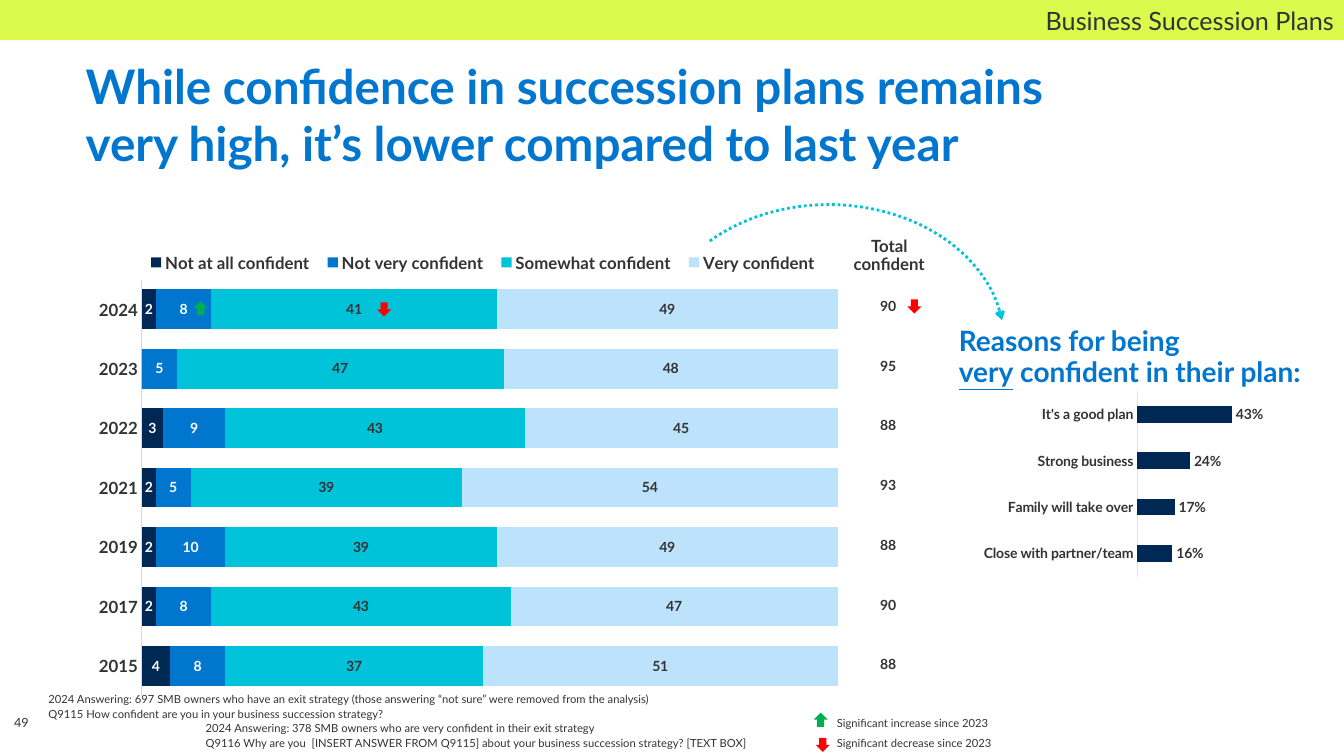
from lxml.etree import SubElement
from pptx import Presentation
from pptx.chart.data import CategoryChartData
from pptx.dml.color import RGBColor
from pptx.enum.chart import XL_CHART_TYPE, XL_LABEL_POSITION, XL_LEGEND_POSITION, XL_TICK_MARK
from pptx.enum.dml import MSO_LINE
from pptx.enum.shapes import MSO_SHAPE
from pptx.enum.text import MSO_ANCHOR, MSO_AUTO_SIZE, PP_ALIGN
from pptx.oxml import parse_xml
from pptx.oxml.ns import nsdecls, qn
from pptx.util import Inches, Pt

NAVY = RGBColor(0x00, 0x28, 0x55)
BLUE = RGBColor(0x00, 0x76, 0xCF)
TEAL = RGBColor(0x00, 0xC3, 0xD9)
PALE_BLUE = RGBColor(0xBD, 0xE3, 0xFC)
LIME = RGBColor(0xDC, 0xF9, 0x4D)
GREEN = RGBColor(0x00, 0xB0, 0x50)
RED = RGBColor(0xFF, 0x00, 0x00)
GRAY = RGBColor(0xE0, 0xE0, 0xE0)
DARK = RGBColor(0x33, 0x33, 0x33)
WHITE = RGBColor(0xFF, 0xFF, 0xFF)
FONT = "Lato"


def format_font(font, size, color=DARK, bold=True):
    font.name = FONT
    font.size = Pt(size)
    font.bold = bold
    font.color.rgb = color


def write_text(frame, text, size, color=DARK, bold=False, align=PP_ALIGN.LEFT, anchor=MSO_ANCHOR.BOTTOM,
               margins=(0, 0), spacing=1.0, after=0, wrap=True, underlined=None):
    frame.word_wrap = wrap
    frame.auto_size = MSO_AUTO_SIZE.NONE
    frame.vertical_anchor = anchor
    frame.margin_left = frame.margin_right = Inches(margins[0])
    frame.margin_top = frame.margin_bottom = Inches(margins[1])
    for number, line in enumerate(text.split("\n")):
        paragraph = frame.add_paragraph() if number else frame.paragraphs[0]
        paragraph.alignment = align
        paragraph.line_spacing = spacing
        paragraph.space_before = Pt(0)
        paragraph.space_after = Pt(after)
        pieces = line.partition(underlined) if underlined and underlined in line else [line]
        for piece in filter(None, pieces):
            run = paragraph.add_run()
            run.text = piece
            format_font(run.font, size, color, bold)
            if piece == underlined:
                run.font.underline = True


presentation = Presentation()
presentation.slide_width = Inches(13.33)
presentation.slide_height = Inches(7.5)
slide = presentation.slides.add_slide(presentation.slide_layouts[5])
shapes = slide.shapes

title = shapes.title
title.left, title.top, title.width, title.height = [Inches(n) for n in (0.85, 0.74, 10.47, 0.78)]
write_text(title.text_frame, "While confidence in succession plans remains very high, it’s lower compared to last year",
           34, BLUE, bold=True, anchor=MSO_ANCHOR.MIDDLE)

confidence_series = [
    ("Not at all confident", (4, 2, 2, 2, 3, 0, 2), NAVY, WHITE),
    ("Not very confident", (8, 8, 10, 5, 9, 5, 8), BLUE, WHITE),
    ("Somewhat confident", (37, 43, 39, 39, 43, 47, 41), TEAL, DARK),
    ("Very confident", (51, 47, 49, 54, 45, 48, 49), PALE_BLUE, DARK),
]
reason_series = [("Series 1", (0.16, 0.17, 0.24, 0.43), NAVY, DARK)]
charts = [
    dict(kind=XL_CHART_TYPE.BAR_STACKED, box=(-0.36, 1.91, 10.84, 5.33),
         categories=("2015", "2017", "2019", "2021", "2022", "2023", "2024"),
         series=confidence_series, gap=50, overlap=100, maximum=120, number_format="0;;",
         label_position=XL_LABEL_POSITION.CENTER, axis_size=12, axis_color=PALE_BLUE,
         plot=(0.163, 0.162, 0.764, 0.775), legend=(0.16, 0.1, 0.63, 0.06)),
    dict(kind=XL_CHART_TYPE.BAR_CLUSTERED, box=(8.81, 3.7, 3.77, 2.62),
         categories=("Close with partner/team", "Family will take over", "Strong business", "It's a good plan"),
         series=reason_series, gap=182, overlap=0, maximum=0.5, number_format="0%",
         label_position=XL_LABEL_POSITION.OUTSIDE_END, axis_size=10, axis_color=GRAY,
         plot=(0.655, 0.069, 0.29, 0.703), legend=None),
]
for settings in charts:
    data = CategoryChartData(number_format=settings["number_format"])
    data.categories = settings["categories"]
    for name, values, _, _ in settings["series"]:
        data.add_series(name, values)
    chart = shapes.add_chart(settings["kind"], *[Inches(n) for n in settings["box"]], data).chart
    chart.has_title = False
    format_font(chart.font, settings["axis_size"])
    plot = chart.plots[0]
    plot.gap_width = settings["gap"]
    plot.overlap = settings["overlap"]
    plot.vary_by_categories = False
    for series, (_, _, color, label_color) in zip(plot.series, settings["series"]):
        series.format.fill.solid()
        series.format.fill.fore_color.rgb = color
        labels = series.data_labels
        labels.show_value = True
        labels.number_format = settings["number_format"]
        labels.number_format_is_linked = False
        labels.position = settings["label_position"]
        format_font(labels.font, 10, label_color)
    value_axis = chart.value_axis
    value_axis.minimum_scale = 0
    value_axis.maximum_scale = settings["maximum"]
    value_axis.has_major_gridlines = False
    value_axis.visible = False
    category_axis = chart.category_axis
    category_axis.major_tick_mark = XL_TICK_MARK.NONE
    category_axis.format.line.color.rgb = settings["axis_color"]
    category_axis.format.line.width = Pt(0.75)
    format_font(category_axis.tick_labels.font, settings["axis_size"])

    plot_area = chart.element.find(".//" + qn("c:plotArea"))
    layouts = [(plot_area, 0, settings["plot"], '<c:layoutTarget val="inner"/>')]
    chart.has_legend = settings["legend"] is not None
    if chart.has_legend:
        chart.legend.position = XL_LEGEND_POSITION.TOP
        chart.legend.include_in_layout = False
        format_font(chart.legend.font, 12)
        layouts.append((chart.element.find(".//" + qn("c:legend")), 1, settings["legend"], ""))
    for parent, index, (x, y, width, height), target in layouts:
        for old_layout in parent.findall(qn("c:layout")):
            parent.remove(old_layout)
        parent.insert(index, parse_xml(
            f'<c:layout {nsdecls("c")}><c:manualLayout>{target}<c:xMode val="edge"/><c:yMode val="edge"/>'
            f'<c:x val="{x}"/><c:y val="{y}"/><c:w val="{width}"/><c:h val="{height}"/>'
            '</c:manualLayout></c:layout>'))

footnote = dict(size=8, spacing=0.9, after=2)
callout = dict(bold=True, anchor=MSO_ANCHOR.TOP, margins=(0.13, 0.07), spacing=0.9, wrap=False)
text_boxes = [
    ((0.48, 6.75, 12.19, 0.4),
     "2024 Answering: 697 SMB owners who have an exit strategy (those answering “not sure” were removed from the analysis)\n"
     "Q9115 How confident are you in your business succession strategy?", footnote),
    ((2.04, 7.04, 11.29, 0.4),
     "2024 Answering: 378 SMB owners who are very confident in their exit strategy\n"
     "Q9116 Why are you  [INSERT ANSWER FROM Q9115] about your business succession strategy? [TEXT BOX]", footnote),
    ((8.3, 7.07, 2.92, 0.17), "Significant increase since 2023", footnote),
    ((8.3, 7.27, 2.92, 0.17), "Significant decrease since 2023", footnote),
    ((0.14, 6.84, 0.39, 0.4), "49", dict(size=9)),
    ((8.49, 2.29, 0.66, 0.43), "Total\nconfident", dict(callout, size=12, align=PP_ALIGN.CENTER)),
    ((9.38, 3.18, 3.7, 0.41), "Reasons for being\nvery confident in their plan:",
     dict(callout, size=20, color=BLUE, underlined="very")),
]
for box, text, text_format in text_boxes:
    text_box = shapes.add_textbox(*[Inches(n) for n in box])
    write_text(text_box.text_frame, text, **text_format)

totals = ("90", "95", "88", "93", "88", "90", "88")
table = shapes.add_table(len(totals), 1, Inches(8.48), Inches(2.74), Inches(0.66), Inches(4.15)).table
table.first_row = False
table.horz_banding = False
for row, total in enumerate(totals):
    cell = table.cell(row, 0)
    cell.fill.background()
    cell.vertical_anchor = MSO_ANCHOR.MIDDLE
    cell.margin_left = cell.margin_right = cell.margin_top = cell.margin_bottom = Inches(0.05)
    paragraph = cell.text_frame.paragraphs[0]
    paragraph.alignment = PP_ALIGN.CENTER
    run = paragraph.add_run()
    run.text = total
    format_font(run.font, 10)

filled_shapes = [
    (MSO_SHAPE.UP_ARROW, GREEN, (8.07, 7.07, 0.14, 0.14)),
    (MSO_SHAPE.DOWN_ARROW, RED, (8.09, 7.32, 0.14, 0.14)),
    (MSO_SHAPE.UP_ARROW, GREEN, (1.92, 2.99, 0.14, 0.14)),
    (MSO_SHAPE.DOWN_ARROW, RED, (3.74, 3, 0.14, 0.14)),
    (MSO_SHAPE.DOWN_ARROW, RED, (9, 2.97, 0.14, 0.14)),
    (MSO_SHAPE.RECTANGLE, LIME, (0, 0, 13.33, 0.4)),
]
for kind, color, box in filled_shapes:
    shape = shapes.add_shape(kind, *[Inches(n) for n in box])
    shape.shadow.inherit = False
    shape.fill.solid()
    shape.fill.fore_color.rgb = color
    shape.line.fill.background()
    if kind == MSO_SHAPE.RECTANGLE:
        write_text(shape.text_frame, "Business Succession Plans", 18, align=PP_ALIGN.RIGHT,
                   anchor=MSO_ANCHOR.MIDDLE, margins=(0.1, 0.05))

arc = shapes.add_shape(MSO_SHAPE.ARC, Inches(6.48), Inches(2.03), Inches(3.48), Inches(2.73))
arc.shadow.inherit = False
arc.adjustments[0] = 132.22
arc.adjustments[1] = 211.67
arc.fill.background()
arc.line.color.rgb = TEAL
arc.line.width = Pt(2)
arc.line.dash_style = MSO_LINE.ROUND_DOT
SubElement(arc.element.find(".//" + qn("a:ln")), qn("a:tailEnd"), type="arrow")

presentation.save("out.pptx")
